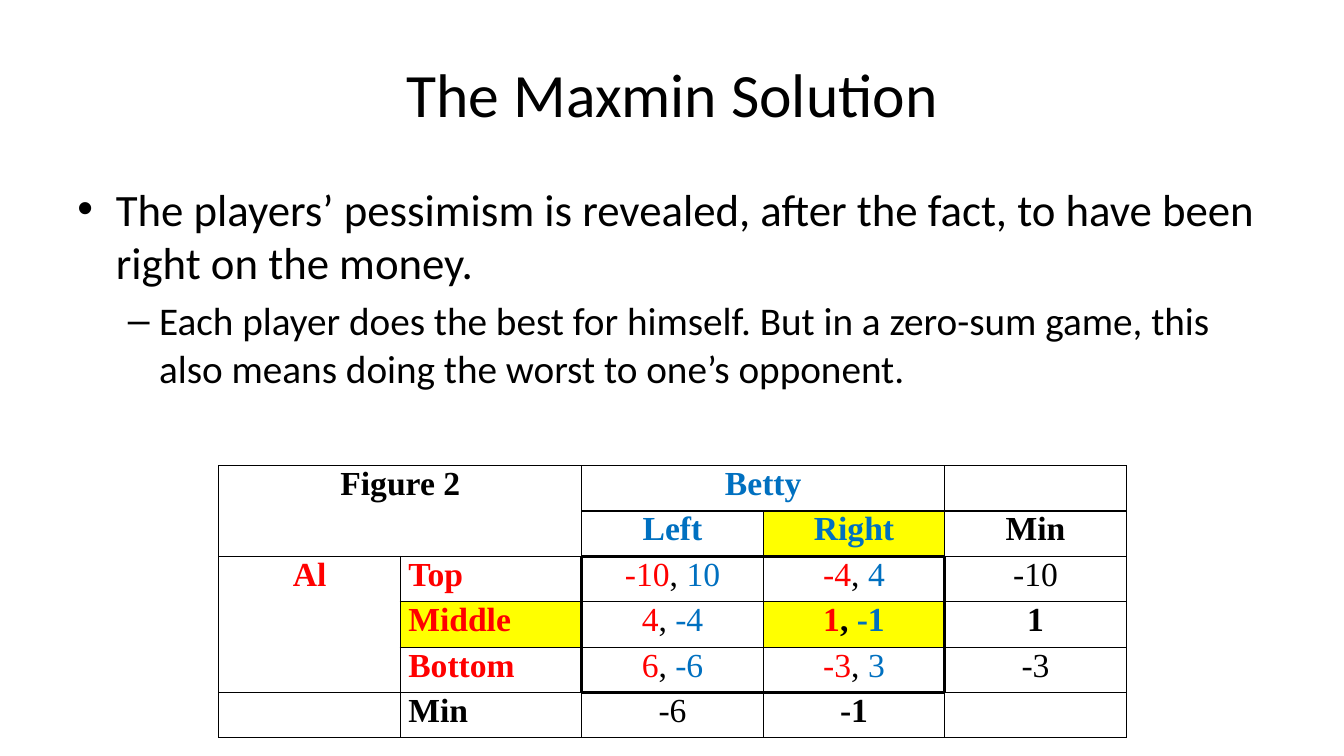
from dataclasses import dataclass

from lxml import etree
from pptx import Presentation, util as u
from pptx.dml.color import RGBColor
from pptx.enum import text
from pptx.oxml import ns

BLACK, RED, BLUE, YELLOW = "000000", "FF0000", "0070C0", "FFFF00"
CENTER, LEFT = text.PP_ALIGN.CENTER, text.PP_ALIGN.LEFT
TABLE_LEFT, TABLE_TOP, COL_WIDTH, ROW_HEIGHT = 2.17, 4.62, 1.8, 0.45
N_ROWS, N_COLS = 6, 5
# Grid lines that frame the payoffs
FRAME_TOP, FRAME_BOTTOM, FRAME_LEFT, FRAME_RIGHT = 2, 5, 2, 4


@dataclass
class Bullet:
    words: str
    char: str
    size: int
    margin: float
    hanging: float


@dataclass
class Entry:
    row: int
    col: int
    pieces: list[tuple[str, str]]
    bold: bool = True
    align: text.PP_ALIGN = CENTER
    fill: str | None = None
    rows: int = 1
    cols: int = 1


def payoff(row: int, col: int, al: str, betty: str, **look) -> Entry:
    return Entry(row, col, [(al, RED), (", ", BLACK), (betty, BLUE)], **look)


BULLETS = [
    Bullet("The players’ pessimism is revealed, after the fact, to have been "
           "right on the money.", "•", 32, 0.38, 0.38),
    Bullet("Each player does the best for himself. But in a zero-sum game, this "
           "also means doing the worst to one’s opponent.", "–", 28, 0.81, 0.31),
]

ENTRIES = [
    Entry(0, 0, [("Figure 2", BLACK)], rows=2, cols=2),
    Entry(0, 2, [("Betty", BLUE)], cols=2),
    Entry(1, 2, [("Left", BLUE)]),
    Entry(1, 3, [("Right", BLUE)], fill=YELLOW),
    Entry(1, 4, [("Min", BLACK)]),
    Entry(2, 0, [("Al", RED)], rows=3),
    Entry(2, 1, [("Top", RED)], align=LEFT),
    payoff(2, 2, "-10", "10", bold=False),
    payoff(2, 3, "-4", "4", bold=False),
    Entry(2, 4, [("-10", BLACK)], bold=False),
    Entry(3, 1, [("Middle", RED)], align=LEFT, fill=YELLOW),
    payoff(3, 2, "4", "-4", bold=False),
    payoff(3, 3, "1", "-1", fill=YELLOW),
    Entry(3, 4, [("1", BLACK)]),
    Entry(4, 1, [("Bottom", RED)], align=LEFT),
    payoff(4, 2, "6", "-6", bold=False),
    payoff(4, 3, "-3", "3", bold=False),
    Entry(4, 4, [("-3", BLACK)], bold=False),
    Entry(5, 1, [("Min", BLACK)], align=LEFT),
    Entry(5, 2, [("-6", BLACK)], bold=False),
    Entry(5, 3, [("-1", BLACK)]),
]


def rgb(color: str) -> RGBColor:
    return RGBColor.from_string(color)


def apply(obj, formats: dict) -> None:
    for name, value in formats.items():
        setattr(obj, name, value)


def add_run(p, words: str, color: str, font: dict) -> None:
    r = p.add_run()
    r.text = words
    apply(r.font, font)
    r.font.color.rgb = rgb(color)


def add_box(s, top: float, height: float, anchor: text.MSO_ANCHOR):
    sp = s.shapes.add_textbox(u.Inches(0.67), u.Inches(top),
                              u.Inches(12), u.Inches(height))
    apply(sp.text_frame, {"word_wrap": True, "vertical_anchor": anchor})
    return sp.text_frame


def add_title(s) -> None:
    p = add_box(s, 0.3, 1.25, text.MSO_ANCHOR.MIDDLE).paragraphs[0]
    p.alignment = CENTER
    add_run(p, "The Maxmin Solution", BLACK,
            {"name": "Calibri", "size": u.Pt(44)})


def add_bullets(s) -> None:
    tf = add_box(s, 1.75, 4.95, text.MSO_ANCHOR.TOP)
    for level, b in enumerate(BULLETS):
        p = tf.add_paragraph() if level else tf.paragraphs[0]
        apply(p, {"level": level, "space_before": u.Pt(b.size * 0.2)})
        add_run(p, b.words, BLACK, {"name": "Calibri", "size": u.Pt(b.size)})
        pPr = p._p.get_or_add_pPr()
        pPr.set("marL", str(u.Inches(b.margin)))
        pPr.set("indent", str(-u.Inches(b.hanging)))
        etree.SubElement(pPr, ns.qn("a:buFont"), typeface="Arial")
        etree.SubElement(pPr, ns.qn("a:buChar"), char=b.char)


def set_borders(cell, row: int, col: int) -> None:
    """Draw thin borders, thick where they lie on the payoff frame."""
    in_rows = FRAME_TOP <= row < FRAME_BOTTOM
    in_cols = FRAME_LEFT <= col < FRAME_RIGHT
    sides = {
        "L": in_rows and col in (FRAME_LEFT, FRAME_RIGHT),
        "R": in_rows and col + 1 in (FRAME_LEFT, FRAME_RIGHT),
        "T": in_cols and row in (FRAME_TOP, FRAME_BOTTOM),
        "B": in_cols and row + 1 in (FRAME_TOP, FRAME_BOTTOM),
    }
    tcPr = cell._tc.get_or_add_tcPr()
    for i, (side, thick) in enumerate(sides.items()):
        ln = etree.Element(ns.qn(f"a:ln{side}"),
                           w=str(u.Pt(2.25 if thick else 1)))
        fill = etree.SubElement(ln, ns.qn("a:solidFill"))
        etree.SubElement(fill, ns.qn("a:srgbClr"), val=BLACK)
        tcPr.insert(i, ln)


def fill_cell(table, e: Entry) -> None:
    cell = table.cell(e.row, e.col)
    if e.rows > 1 or e.cols > 1:
        cell.merge(table.cell(e.row + e.rows - 1, e.col + e.cols - 1))
    if e.fill:
        cell.fill.solid()
        cell.fill.fore_color.rgb = rgb(e.fill)
    p = cell.text_frame.paragraphs[0]
    p.alignment = e.align
    for words, color in e.pieces:
        add_run(p, words, color, {"name": "Times New Roman",
                                  "size": u.Pt(24), "bold": e.bold})


def add_payoff_table(s) -> None:
    table = s.shapes.add_table(
        N_ROWS, N_COLS, u.Inches(TABLE_LEFT), u.Inches(TABLE_TOP),
        u.Inches(N_COLS * COL_WIDTH), u.Inches(N_ROWS * ROW_HEIGHT)).table
    apply(table, {"first_row": False, "horz_banding": False})
    margins = {"margin_left": u.Inches(0.08), "margin_right": u.Inches(0.08),
               "margin_top": 0, "margin_bottom": 0}
    for row in range(N_ROWS):
        for col in range(N_COLS):
            cell = table.cell(row, col)
            apply(cell, margins)
            cell.fill.background()
            set_borders(cell, row, col)
    for e in ENTRIES:
        fill_cell(table, e)


def main() -> None:
    prs = Presentation()
    apply(prs, {"slide_width": u.Inches(13.33), "slide_height": u.Inches(7.5)})
    s = prs.slides.add_slide(prs.slide_layouts[6])
    add_title(s)
    add_bullets(s)
    add_payoff_table(s)
    prs.save("out.pptx")


if __name__ == "__main__":
    main()
